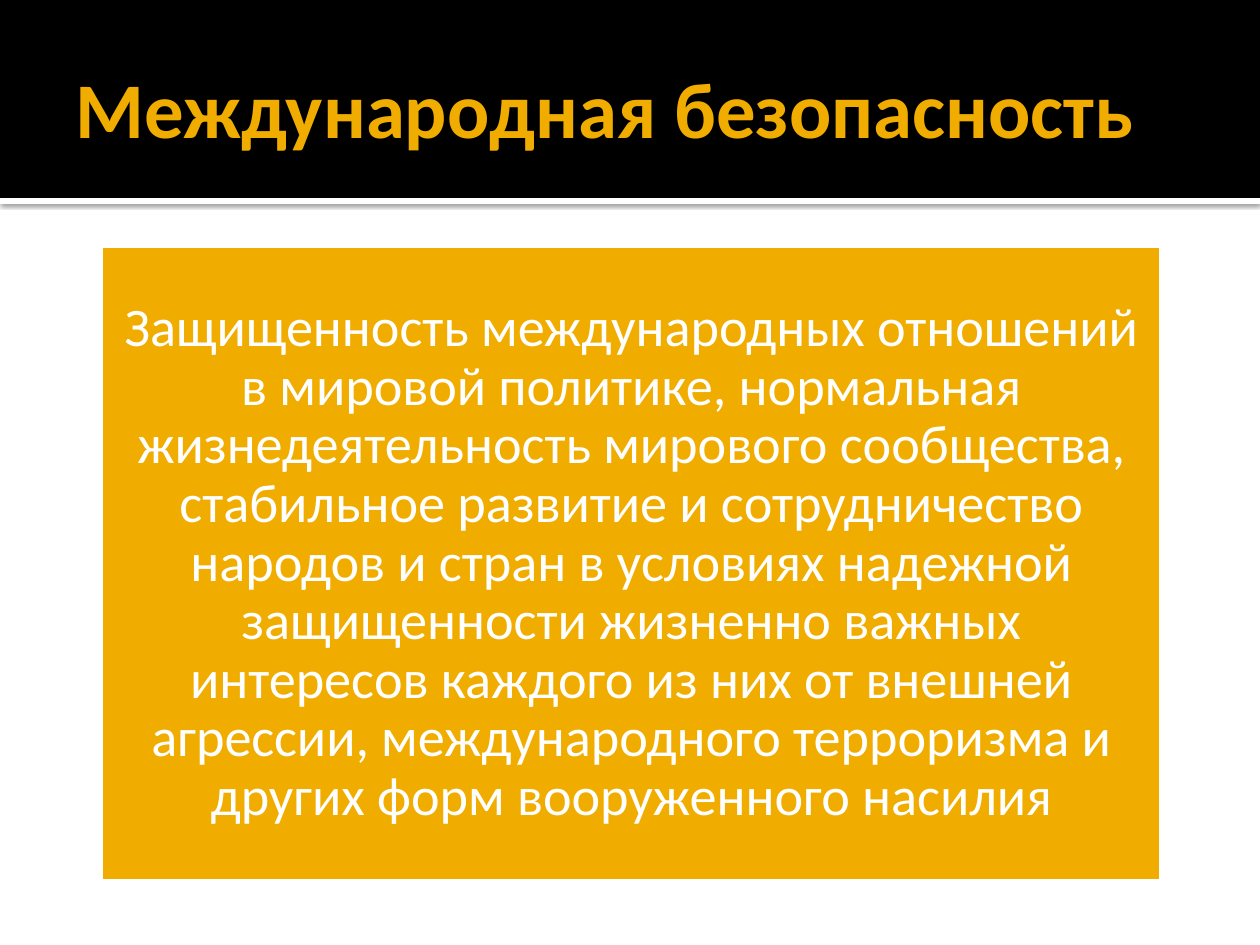
"""Build the slide defining international security."""
import pptx
import pptx.util
import pptx.dml.color
import pptx.enum.shapes
import pptx.enum.text
import pptx.oxml

TITLE = "Международная безопасность"
DEFINITION = (
    "Защищенность международных отношений в мировой политике, нормальная "
    "жизнедеятельность мирового сообщества, стабильное развитие и сотрудничество "
    "народов и стран в условиях надежной защищенности жизненно важных интересов "
    "каждого из них от внешней агрессии, международного терроризма и других форм "
    "вооруженного насилия"
)
WIDTH, HEIGHT = 1260, 945
STRIPE = (0, 198, WIDTH, 6)
BAND = (0, 0, WIDTH, 198)
TITLE_AREA = (63, 21, 1134, 173)
PANEL = (100, 245, 1062, 637)
BLACK, WHITE, AMBER = "000000", "FFFFFF", "F0AD00"
FONT = "Calibri"
SHADOW = (
    '<a:effectLst xmlns:a="http://schemas.openxmlformats.org/drawingml/2006/main">'
    '<a:outerShdw blurRad="31750" dist="10160" dir="5400000" algn="tl" rotWithShape="0">'
    '<a:srgbClr val="000000"><a:alpha val="60000"/></a:srgbClr>'
    "</a:outerShdw></a:effectLst>"
)


def px(length):
    return pptx.util.Emu(length * 914400 // 126)


def color(value):
    return pptx.dml.color.RGBColor.from_string(value)


def add_rectangle(page, area, fill):
    box = page.shapes.add_shape(
        pptx.enum.shapes.MSO_SHAPE.RECTANGLE, *map(px, area))
    box.shadow.inherit = False
    box.fill.solid()
    box.fill.fore_color.rgb = color(fill)
    box.line.fill.background()
    return box


def write(box, text, size, ink, margins, bold=False):
    frame = box.text_frame
    frame.word_wrap = True
    frame.vertical_anchor = pptx.enum.text.MSO_ANCHOR.MIDDLE
    (frame.margin_left, frame.margin_top,
     frame.margin_right, frame.margin_bottom) = map(px, margins)
    frame.text = text
    para = frame.paragraphs[0]
    font = para.runs[0].font
    font.name, font.size, font.bold = FONT, pptx.util.Pt(size), bold
    font.color.rgb = color(ink)
    return para


def main():
    deck = pptx.Presentation()
    deck.slide_width, deck.slide_height = px(WIDTH), px(HEIGHT)
    page = deck.slides.add_slide(deck.slide_layouts[6])

    stripe = add_rectangle(page, STRIPE, WHITE)
    properties = stripe.element.spPr
    properties.remove(properties.find(pptx.oxml.ns.qn("a:effectLst")))
    properties.append(pptx.oxml.parse_xml(SHADOW))
    add_rectangle(page, BAND, BLACK)

    heading = page.shapes.add_textbox(*map(px, TITLE_AREA))
    write(heading, TITLE, 45, AMBER, (13, 6, 6, 6), bold=True)

    panel = add_rectangle(page, PANEL, AMBER)
    panel.line.color.rgb = color(WHITE)
    panel.line.width = pptx.util.Pt(3.78)
    para = write(panel, DEFINITION, 31, WHITE, (16, 16, 16, 16))
    para.alignment = pptx.enum.text.PP_ALIGN.CENTER
    para.line_spacing = 0.9

    deck.save("out.pptx")


if __name__ == "__main__":
    main()
